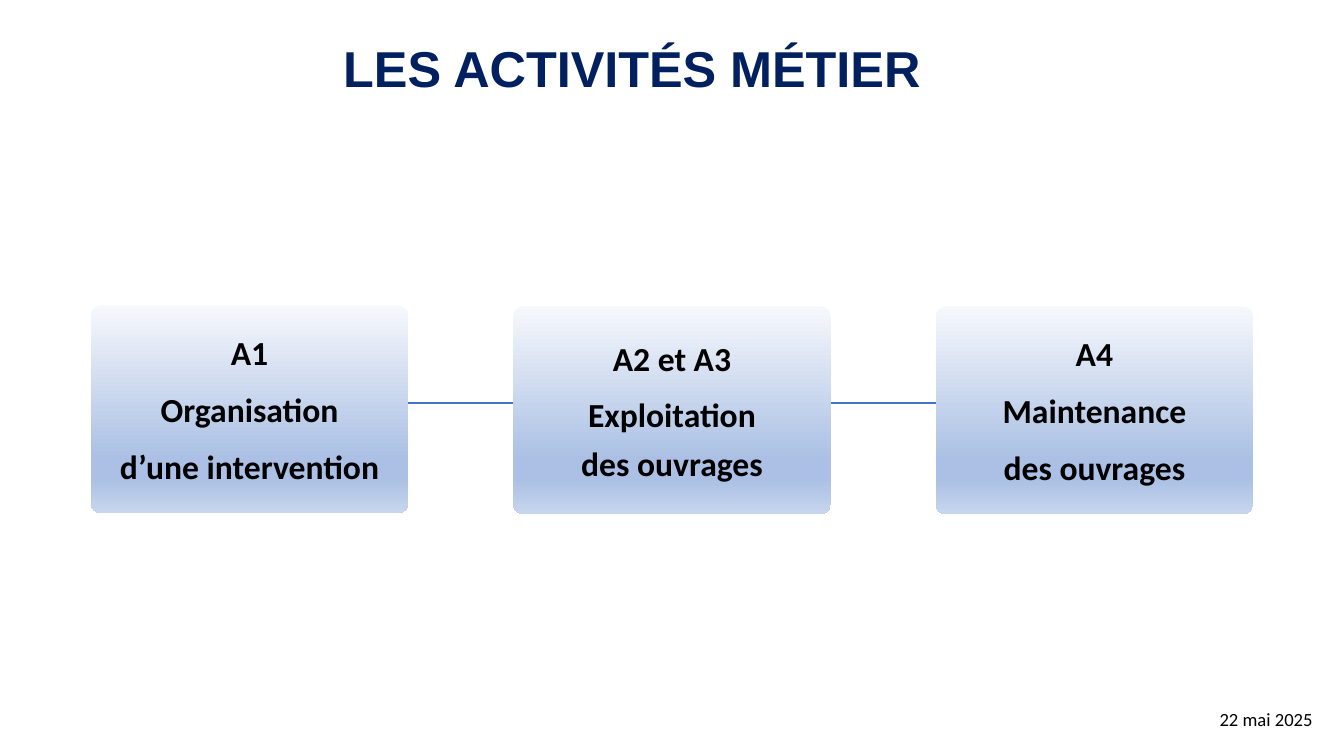
from lxml import etree
from pptx import Presentation
from pptx.dml.color import RGBColor
from pptx.enum import shapes, text
from pptx.oxml.ns import qn
from pptx.util import Inches, Pt

COLORS = {"title": "002060", "line": "4472C4", "text": "000000"}
GRADIENT = [(0, "F6F8FC"), (74, "ABC0E4"), (83, "ABC0E4"), (100, "C7D5ED")]
TITLE = "LES ACTIVITÉS MÉTIER"
DATE = "22 mai 2025"
ACTIVITIES = [
    {"top": 3.03, "after": 6.7, "lines": ["A1", "Organisation", "d’une intervention"]},
    {"top": 3.04, "after": 0, "lines": ["A2 et A3", "Exploitation", "des ouvrages"]},
    {"top": 3.04, "after": 6.7, "lines": ["A4", "Maintenance", "des ouvrages"]},
]
LEFT, STEP, WIDTH, HEIGHT = 0.9, 4.19, 3.15, 2.06
CENTER = text.PP_ALIGN.CENTER


def set_margins(frame, side, end):
    frame.word_wrap = True
    frame.margin_left = frame.margin_right = Inches(side)
    frame.margin_top = frame.margin_bottom = Inches(end)


def write(para, words, font, size, color, bold, align, spacing):
    para.alignment = align
    para.line_spacing = spacing
    span = para.add_run()
    span.text = words
    span.font.name = font
    span.font.size = Pt(size)
    span.font.bold = bold
    span.font.color.rgb = RGBColor.from_string(COLORS[color])


def add_label(page, place, margins, *style):
    box = page.shapes.add_textbox(*map(Inches, place))
    set_margins(box.text_frame, *margins)
    write(box.text_frame.paragraphs[0], *style)


def fill_gradient(shape):
    shape.fill.gradient()
    shape.fill.gradient_angle = 270
    stops = shape._element.spPr.find(qn("a:gradFill")).find(qn("a:gsLst"))
    for stop in list(stops):
        stops.remove(stop)
    for percent, color in GRADIENT:
        stop = etree.SubElement(stops, qn("a:gs"), pos=str(percent * 1000))
        etree.SubElement(stop, qn("a:srgbClr"), val=color)


def add_activity(page, index, activity):
    place = (LEFT + index * STEP, activity["top"], WIDTH, HEIGHT)
    box = page.shapes.add_shape(
        shapes.MSO_SHAPE.ROUNDED_RECTANGLE, *map(Inches, place))
    box.adjustments[0] = 0.05
    box.shadow.inherit = False
    box.line.fill.background()
    fill_gradient(box)
    frame = box.text_frame
    set_margins(frame, 0.05, 0.04)
    frame.vertical_anchor = text.MSO_ANCHOR.MIDDLE
    for number, words in enumerate(activity["lines"]):
        para = frame.add_paragraph() if number else frame.paragraphs[0]
        spacing = 1.2 if number else 1.0
        write(para, words, "Calibri", 24, "text", True, CENTER, spacing)
        para.space_after = Pt(activity["after"] if number else 6)


def main():
    deck = Presentation()
    deck.slide_width, deck.slide_height = Inches(13.33), Inches(7.5)
    page = deck.slides.add_slide(deck.slide_layouts[6])
    add_label(page, (1.88, 0.23, 8.78, 0.74), (0.1, 0.05),
              TITLE, "Arial", 36, "title", True, CENTER, 1.15)
    link = page.shapes.add_connector(
        shapes.MSO_CONNECTOR.STRAIGHT, *map(Inches, (3.34, 4, 11.87, 4)))
    link.line.color.rgb = RGBColor.from_string(COLORS["line"])
    link.line.width = Pt(1.5)
    etree.SubElement(link._element.spPr, qn("a:effectLst"))
    for index, activity in enumerate(ACTIVITIES):
        add_activity(page, index, activity)
    add_label(page, (9.89, 7.06, 3.15, 0.35), (0.02, 0.02),
              DATE, "Calibri", 13.3, "text", False, text.PP_ALIGN.RIGHT, 0.7)
    deck.save("out.pptx")


if __name__ == "__main__":
    main()
